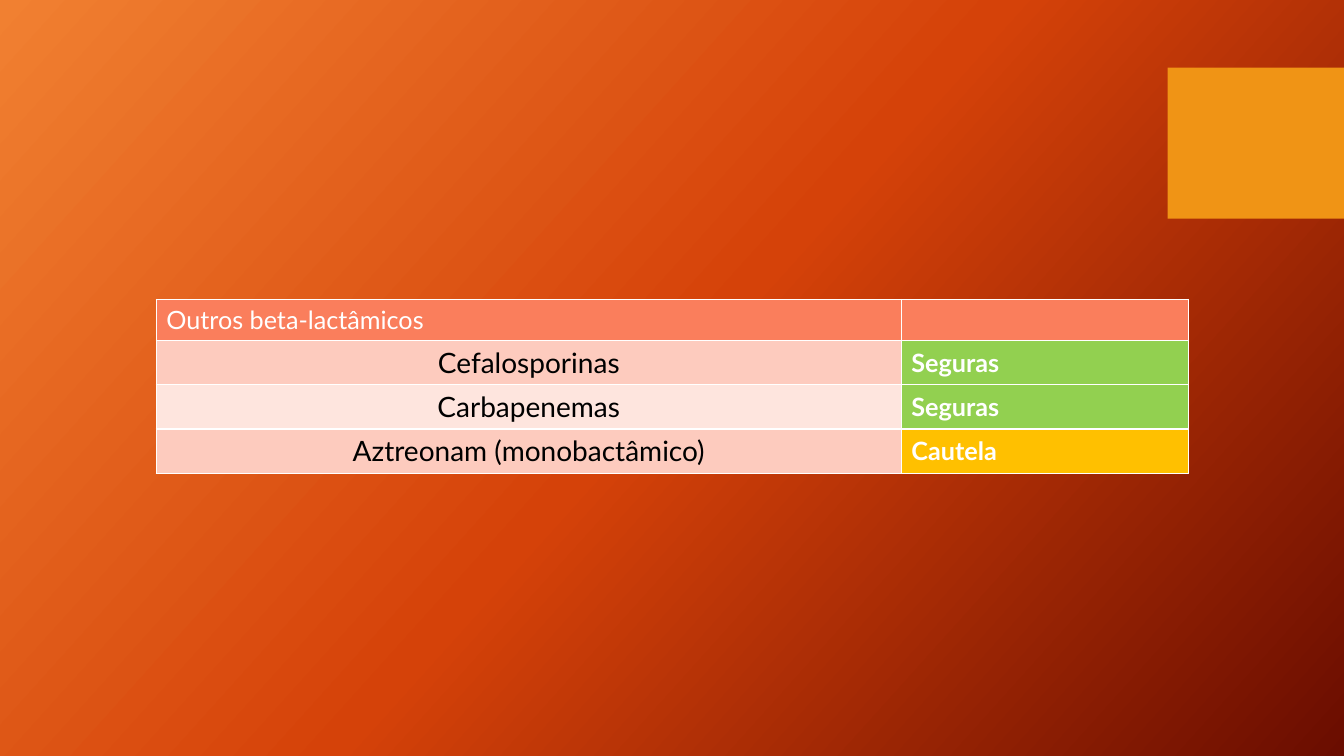
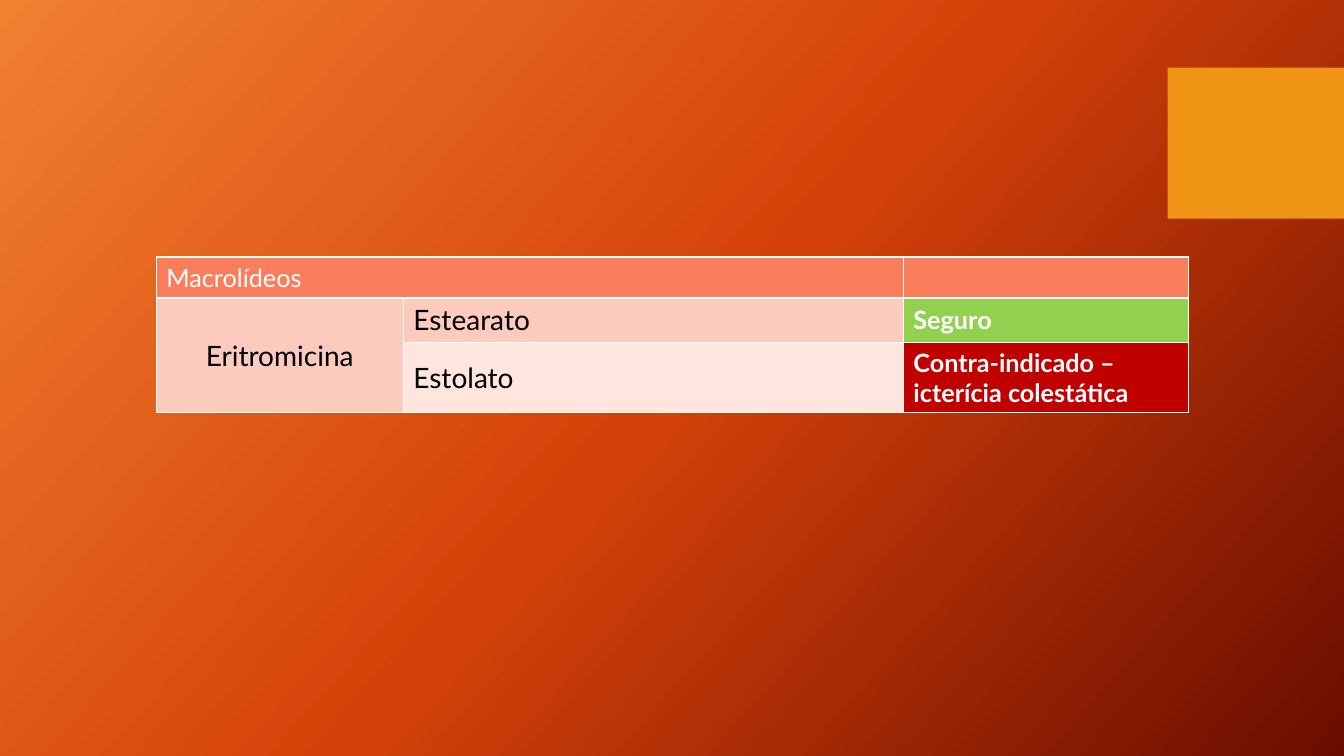
from copy import deepcopy
from dataclasses import dataclass

from lxml.etree import SubElement as Sub
from pptx import Presentation
from pptx.dml.color import RGBColor as RGB
from pptx.enum.shapes import MSO_SHAPE as Shape
from pptx.enum.text import MSO_ANCHOR as Anchor, PP_ALIGN as Align
from pptx.oxml.ns import qn
from pptx.slide import Slide, SlideMaster as Master
from pptx.table import _Cell as TableCell
from pptx.util import Inches, Pt

FONT = "Lato"
WHITE = RGB(0xFF, 0xFF, 0xFF)
BLACK = RGB(0x00, 0x00, 0x00)
ORANGE = RGB(0xF0, 0x94, 0x15)
CORAL = RGB(0xFA, 0x7E, 0x5C)
PINK = RGB(0xFD, 0xCB, 0xBE)
PALE = RGB(0xFE, 0xE5, 0xDE)
GREEN = RGB(0x92, 0xD0, 0x50)
AMBER = RGB(0xFF, 0xC0, 0x00)
RED = RGB(0xC0, 0x00, 0x00)
BACK = (RGB(0xF1, 0x80, 0x31), RGB(0xD5, 0x42, 0x09), RGB(0x6A, 0x0D, 0x00))
ANGLE = 42

LEFT = 1.55
HEAD_H, ROW_H, TALL_H = 0.4, 0.44, 0.69


@dataclass(frozen=True)
class Style:
    size: int
    color: RGB
    bold: bool = False
    align: Align = Align.LEFT


HEAD = Style(18, WHITE)
DRUG = Style(20, BLACK, align=Align.CENTER)
SALT = Style(20, BLACK)
TAG = Style(18, WHITE, bold=True)


@dataclass(frozen=True)
class Cell:
    text: str
    fill: RGB
    style: Style
    rows: int = 1
    cols: int = 1


@dataclass(frozen=True)
class Grid:
    top: float
    widths: list[float]
    heights: list[float]
    cells: list[list[Cell | None]]


GRIDS = [
    Grid(2.97, [7.39, 2.85], [HEAD_H] + [ROW_H] * 3, [
        [Cell("Outros beta-lactâmicos", CORAL, HEAD), Cell("", CORAL, HEAD)],
        [Cell("Cefalosporinas", PINK, DRUG), Cell("Seguras", GREEN, TAG)],
        [Cell("Carbapenemas", PALE, DRUG), Cell("Seguras", GREEN, TAG)],
        [Cell("Aztreonam (monobactâmico)", PINK, DRUG), Cell("Cautela", AMBER, TAG)],
    ]),
    Grid(2.55, [2.45, 4.96, 2.83], [HEAD_H, ROW_H, TALL_H], [
        [Cell("Macrolídeos", CORAL, HEAD, cols=2), None, Cell("", CORAL, HEAD)],
        [Cell("Eritromicina", PINK, DRUG, rows=2), Cell("Estearato", PINK, SALT),
         Cell("Seguro", GREEN, TAG)],
        [None, Cell("Estolato", PALE, SALT),
         Cell("Contra-indicado – icterícia colestática", RED, TAG)],
    ]),
]


def paint_back(master: Master) -> None:
    fill = master.background.fill
    fill.gradient()
    fill.gradient_angle = 360 - ANGLE
    stops = master.element.find(".//" + qn("a:gsLst"))
    stops.append(deepcopy(stops[-1]))
    for i, (stop, color) in enumerate(zip(fill.gradient_stops, BACK)):
        stop.position = i / (len(BACK) - 1)
        stop.color.rgb = color


def add_block(slide: Slide, master: Master) -> None:
    """Draw the corner block and move it to the master, for all slides."""
    block = slide.shapes.add_shape(
        Shape.RECTANGLE, Inches(11.58), Inches(0.67), Inches(1.75), Inches(1.5))
    block.shadow.inherit = False
    block.fill.solid()
    block.fill.fore_color.rgb = ORANGE
    block.line.fill.background()
    master.shapes.element.append(block.element)


def add_rules(box: TableCell) -> None:
    """Give a table cell thin white borders."""
    props = box._tc.get_or_add_tcPr()
    for side in ("L", "R", "T", "B"):
        line = Sub(props, qn(f"a:ln{side}"), w=str(Pt(1)))
        fill = Sub(line, qn("a:solidFill"))
        Sub(fill, qn("a:srgbClr"), val=str(WHITE))


def fill_cell(box: TableCell, cell: Cell) -> None:
    box.fill.solid()
    box.fill.fore_color.rgb = cell.fill
    box.vertical_anchor = Anchor.MIDDLE
    para = box.text_frame.paragraphs[0]
    para.alignment = cell.style.align
    if cell.text:
        run = para.add_run()
        run.text = cell.text
        font = run.font
        font.name = FONT
        font.size = Pt(cell.style.size)
        font.bold = cell.style.bold
        font.color.rgb = cell.style.color


def add_grid(slide: Slide, grid: Grid) -> None:
    table = slide.shapes.add_table(
        len(grid.heights), len(grid.widths), Inches(LEFT), Inches(grid.top),
        Inches(sum(grid.widths)), Inches(sum(grid.heights))).table
    for col, width in zip(table.columns, grid.widths):
        col.width = Inches(width)
    for row, height in zip(table.rows, grid.heights):
        row.height = Inches(height)
    for r, line in enumerate(grid.cells):
        for c, cell in enumerate(line):
            box = table.cell(r, c)
            add_rules(box)
            if cell is None:
                continue
            fill_cell(box, cell)
            if cell.rows > 1 or cell.cols > 1:
                box.merge(table.cell(r + cell.rows - 1, c + cell.cols - 1))


def main() -> None:
    deck = Presentation()
    deck.slide_width, deck.slide_height = Inches(13.33), Inches(7.5)
    master = deck.slide_master
    paint_back(master)
    blank = deck.slide_layouts.get_by_name("Blank")
    slides = [deck.slides.add_slide(blank) for _ in GRIDS]
    add_block(slides[0], master)
    for slide, grid in zip(slides, GRIDS):
        add_grid(slide, grid)
    deck.save("out.pptx")


if __name__ == "__main__":
    main()
